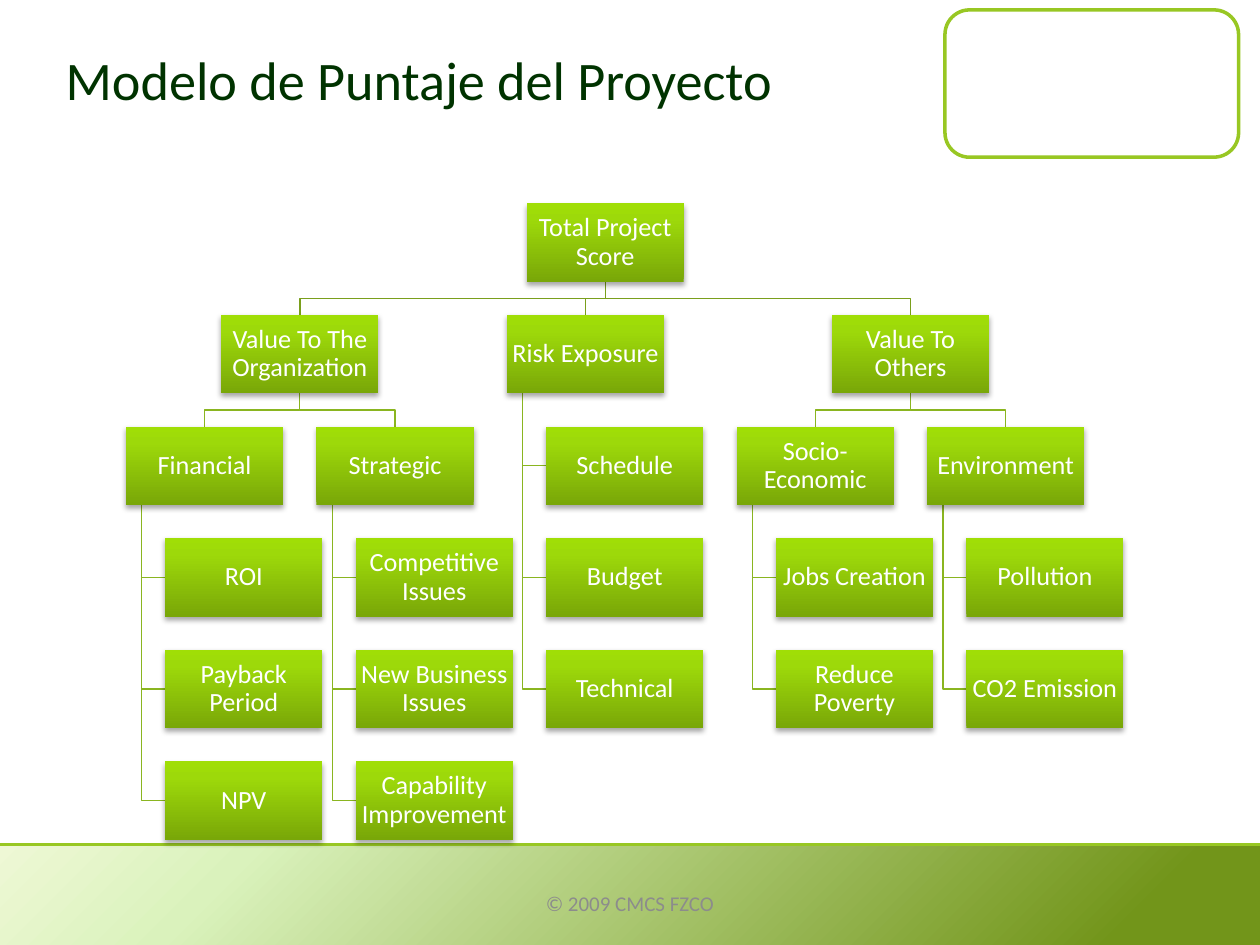
from copy import deepcopy
from dataclasses import dataclass, field

from lxml import etree
from pptx import Presentation
from pptx.dml.color import RGBColor
from pptx.enum.shapes import MSO_CONNECTOR as CONNECTOR, MSO_SHAPE as SHAPE
from pptx.enum.text import MSO_ANCHOR as ANCHOR, PP_ALIGN as ALIGN
from pptx.oxml import parse_xml
from pptx.oxml.ns import nsdecls, qn
from pptx.util import Cm, Pt

FONT = "Calibri"
WHITE = RGBColor(0xFF, 0xFF, 0xFF)
TITLE_GREEN = RGBColor(0x00, 0x33, 0x00)
LIME = RGBColor(0x98, 0xC7, 0x23)
GRAY = RGBColor(0x8C, 0x8C, 0x8C)
ROOT_LINK = RGBColor(0x7A, 0x9F, 0x1C)
BRANCH_LINK = RGBColor(0x8A, 0xB5, 0x20)
BAND_STOPS = [(0, RGBColor(0xEE, 0xF8, 0xD5)), (0.19, RGBColor(0xDA, 0xF2, 0xBC)),
              (0.89, RGBColor(0x72, 0x95, 0x1A))]
BOX_STOPS = [(0, RGBColor(0x79, 0xA7, 0x08)), (0.8, RGBColor(0x9D, 0xD9, 0x0A)),
             (1, RGBColor(0xA0, 0xDE, 0x06))]

# Chart measures in centimetres
BOX_WIDTH, BOX_HEIGHT = 3.17, 1.58
COLUMN_STEP, ROW_STEP = 3.84, 2.25
INDENT = 0.79
STEM = 0.32  # from a box's left edge to its hanging line


@dataclass
class Node:
    """A scored item; one with a column hangs its children below it."""
    label: str
    children: list = field(default_factory=list)
    column: float = None
    left: float = 0
    top: float = 0


def hanging(label, column, *leaves):
    return Node(label, [Node(leaf) for leaf in leaves], column)


SCORE_TREE = Node("Total Project Score", [
    Node("Value To The Organization", [
        hanging("Financial", 0, "ROI", "Payback Period", "NPV"),
        hanging("Strategic", COLUMN_STEP, "Competitive Issues",
                "New Business Issues", "Capability Improvement"),
    ]),
    hanging("Risk Exposure", 2 * COLUMN_STEP, "Schedule", "Budget", "Technical"),
    Node("Value To Others", [
        hanging("Socio-Economic", 3 * COLUMN_STEP + INDENT,
                "Jobs Creation", "Reduce Poverty"),
        hanging("Environment", 4 * COLUMN_STEP + INDENT,
                "Pollution", "CO2 Emission"),
    ]),
])


def add_run(paragraph, text, size, color):
    run = paragraph.add_run()
    run.text = text
    run.font.name = FONT
    run.font.size = Pt(size)
    run.font.color.rgb = color


def fill_gradient(shape, stops, angle):
    shape.fill.gradient()
    shape.fill.gradient_angle = angle
    stop_list = shape._element.spPr.find(qn("a:gradFill")).find(qn("a:gsLst"))
    stop_list.append(deepcopy(stop_list[0]))
    for stop, (position, color) in zip(shape.fill.gradient_stops, stops):
        stop.position = position
        stop.color.rgb = color


def add_shadow(shape):
    shape.shadow.inherit = False
    shape._element.spPr.find(qn("a:effectLst")).append(parse_xml(
        f'<a:outerShdw {nsdecls("a")} blurRad="{Pt(3.1)}" dist="{Pt(1.8)}" '
        'dir="5400000" rotWithShape="0"><a:srgbClr val="000000">'
        '<a:alpha val="35000"/></a:srgbClr></a:outerShdw>'))


def add_header(slide, left, top, width, height):
    # Title
    title = slide.shapes.title
    title.left, title.top = Cm(left), Cm(top)
    title.width, title.height = Cm(width), Cm(height)
    title.text_frame.vertical_anchor = ANCHOR.MIDDLE
    paragraph = title.text_frame.paragraphs[0]
    paragraph.alignment = ALIGN.LEFT
    add_run(paragraph, "Modelo de Puntaje del Proyecto", 31, TITLE_GREEN)

    # Empty rounded frame to the right
    frame = slide.shapes.add_shape(SHAPE.ROUNDED_RECTANGLE, Cm(left + 17.98),
                                   Cm(top + 0.2), Cm(5.92), Cm(2.97))
    frame.shadow.inherit = False
    frame.fill.solid()
    frame.fill.fore_color.rgb = WHITE
    frame.line.color.rgb = LIME
    frame.line.width = Pt(2)


def add_footer_band(slide, left, top, width, height):
    band = slide.shapes.add_shape(SHAPE.RECTANGLE, Cm(left), Cm(top),
                                  Cm(width), Cm(height))
    band.shadow.inherit = False
    fill_gradient(band, BAND_STOPS, 315)
    band.line.fill.background()

    edge = slide.shapes.add_connector(CONNECTOR.STRAIGHT, Cm(left), Cm(top),
                                      Cm(left + width), Cm(top))
    edge.line.color.rgb = LIME
    edge.line.width = Pt(1.5)
    etree.SubElement(edge._element.spPr, qn("a:effectLst"))


def add_copyright(slide, left, top, width, height):
    text_box = slide.shapes.add_textbox(Cm(left), Cm(top), Cm(width), Cm(height))
    text_box.text_frame.word_wrap = True
    text_box.text_frame.vertical_anchor = ANCHOR.MIDDLE
    paragraph = text_box.text_frame.paragraphs[0]
    paragraph.alignment = ALIGN.CENTER
    add_run(paragraph, "© 2009 CMCS FZCO", 12, GRAY)


def place(node, left, top):
    """Set the position of a node and of everything below it."""
    node.top = top
    if node.column is not None:
        node.left = left + node.column
        for row, leaf in enumerate(node.children, 1):
            leaf.left, leaf.top = node.left + INDENT, top + row * ROW_STEP
    else:
        for child in node.children:
            place(child, left, top + ROW_STEP)
        node.left = (node.children[0].left + node.children[-1].left) / 2


def add_link(slide, points, color):
    (start_x, start_y), *others = [(Cm(x), Cm(y)) for x, y in points]
    builder = slide.shapes.build_freeform(start_x, start_y)
    builder.add_line_segments(others, close=False)
    link = builder.convert_to_shape()
    link.shadow.inherit = False
    link.fill.background()
    link.line.color.rgb = color
    link.line.width = Pt(0.75)


def add_links(slide, node, color):
    bottom = node.top + BOX_HEIGHT
    for child in node.children:
        if node.column is not None:
            stem, middle = node.left + STEM, child.top + BOX_HEIGHT / 2
            points = [(stem, bottom), (stem, middle), (child.left, middle)]
        else:
            start, end = node.left + BOX_WIDTH / 2, child.left + BOX_WIDTH / 2
            bend = (bottom + child.top) / 2
            points = [(start, bottom), (start, bend), (end, bend), (end, child.top)]
        add_link(slide, points, color)
        add_links(slide, child, BRANCH_LINK)


def add_boxes(slide, node):
    box = slide.shapes.add_shape(SHAPE.RECTANGLE, Cm(node.left), Cm(node.top),
                                 Cm(BOX_WIDTH), Cm(BOX_HEIGHT))
    fill_gradient(box, BOX_STOPS, 90)
    box.line.fill.background()
    add_shadow(box)
    frame = box.text_frame
    frame.word_wrap = True
    frame.vertical_anchor = ANCHOR.MIDDLE
    frame.margin_left = frame.margin_right = Cm(0.03)
    frame.margin_top = frame.margin_bottom = Cm(0.03)
    paragraph = frame.paragraphs[0]
    paragraph.alignment = ALIGN.CENTER
    paragraph.line_spacing = 0.9
    add_run(paragraph, node.label, 15, WHITE)
    for child in node.children:
        add_boxes(slide, child)


def add_score_tree(slide, left, top):
    place(SCORE_TREE, left, top)
    add_links(slide, SCORE_TREE, ROOT_LINK)
    add_boxes(slide, SCORE_TREE)


def main():
    presentation = Presentation()
    presentation.slide_width, presentation.slide_height = Cm(25.4), Cm(19.05)
    slide = presentation.slides.add_slide(presentation.slide_layouts[5])
    add_header(slide, 1.07, 0, 17.15, 3.18)
    add_footer_band(slide, 0, 17.02, 25.4, 2.03)
    add_score_tree(slide, 2.54, 4.1)
    add_copyright(slide, 0, 17.58, 25.4, 1.27)
    presentation.save("out.pptx")


if __name__ == "__main__":
    main()
